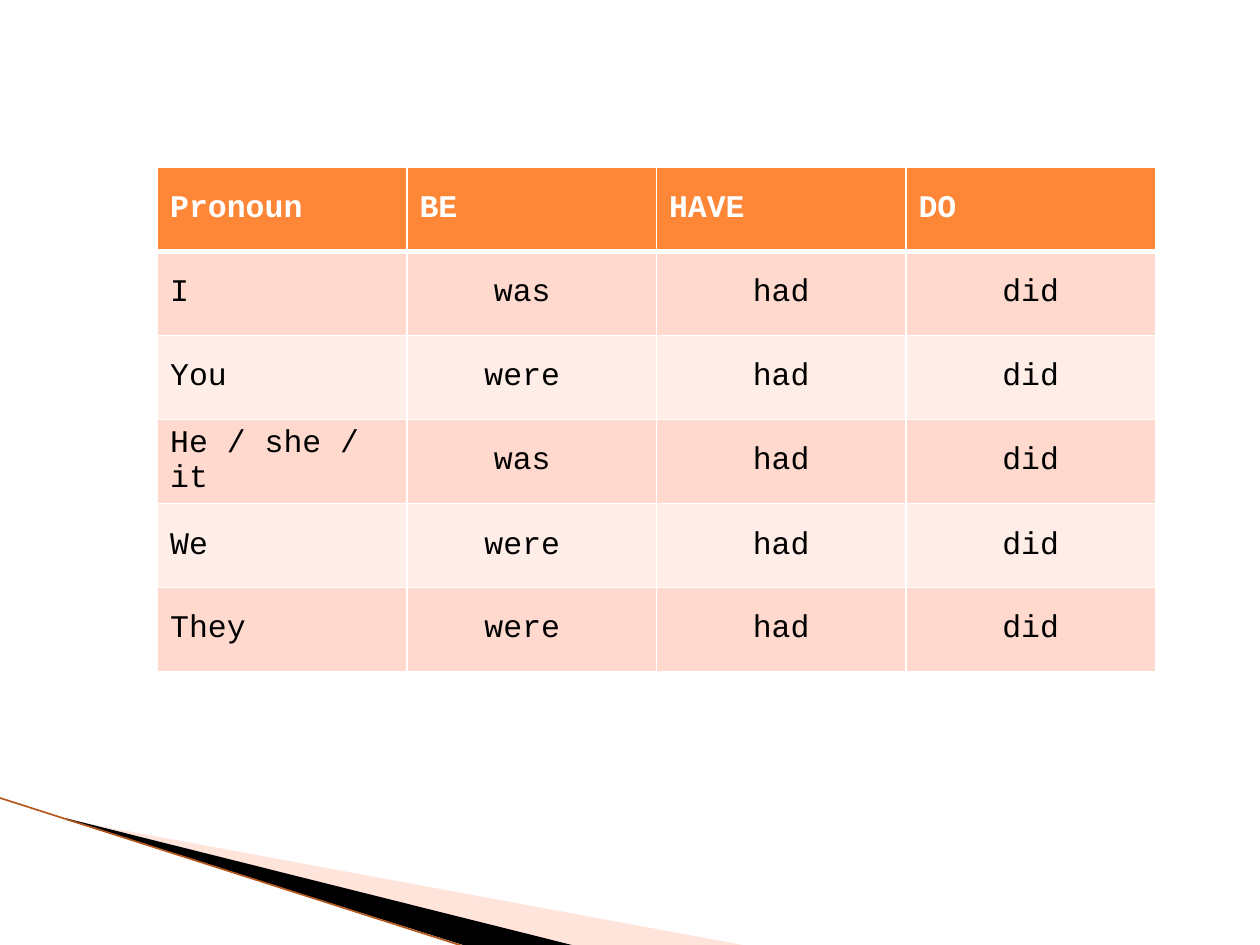
from lxml import etree
from pptx import Presentation
from pptx.dml.color import RGBColor
from pptx.enum.shapes import MSO_CONNECTOR
from pptx.enum.text import MSO_ANCHOR, PP_ALIGN
from pptx.oxml.ns import qn
from pptx.util import Inches, Pt

STRAIGHT = MSO_CONNECTOR.STRAIGHT
MIDDLE = MSO_ANCHOR.MIDDLE
LEFT, CENTER = PP_ALIGN.LEFT, PP_ALIGN.CENTER

SLIDE_W, SLIDE_H = 10, 7.5
FONT = "Courier New"
WHITE, BLACK = "FFFFFF", "000000"
HEADER_FILL = "FE8637"
BAND_FILLS = ("FFD9CE", "FFEDE8")
HEADINGS = ("Pronoun", "BE", "HAVE", "DO")
BE_FORMS = (
    ("I", "was "),
    ("You", "were "),
    ("He / she / it", "was "),
    ("We", "were "),
    ("They", "were "),
)


def color(value):
    return RGBColor.from_string(value)


def add_solid(parent, value, alpha=None):
    solid = etree.SubElement(parent, qn("a:solidFill"))
    tone = etree.SubElement(solid, qn("a:srgbClr"), val=value)
    if alpha is not None:
        etree.SubElement(tone, qn("a:alpha"), val=str(alpha * 1000))


def set_borders(cell, top, bottom):
    properties = cell._tc.get_or_add_tcPr()
    for side, width in (("L", 1), ("R", 1), ("T", top), ("B", bottom)):
        border = etree.SubElement(properties, qn(f"a:ln{side}"), w=str(Pt(width)))
        add_solid(border, WHITE)


def write_cell(cell, text, fill, ink, bold, align):
    cell.fill.solid()
    cell.fill.fore_color.rgb = color(fill)
    cell.vertical_anchor = MIDDLE
    paragraph = cell.text_frame.paragraphs[0]
    paragraph.alignment = align
    run = paragraph.add_run()
    run.text = text
    run.font.name = FONT
    run.font.size = Pt(18)
    run.font.bold = bold
    run.font.color.rgb = color(ink)


def add_verb_table(slide, left, top, width, height):
    rows = [HEADINGS] + [(pronoun, be, "had", "did") for pronoun, be in BE_FORMS]
    frame = slide.shapes.add_table(
        len(rows), len(HEADINGS),
        Inches(left), Inches(top), Inches(width), Inches(height),
    )
    table = frame.table
    for r, row in enumerate(rows):
        header = r == 0
        fill = HEADER_FILL if header else BAND_FILLS[(r - 1) % 2]
        ink = WHITE if header else BLACK
        for c, text in enumerate(row):
            cell = table.cell(r, c)
            set_borders(cell, 3 if r == 1 else 1, 3 if header else 1)
            align = LEFT if header or c == 0 else CENTER
            write_cell(cell, text, fill, ink, header, align)


def add_wedge(slide, points, fill, alpha=None):
    start, *others = [(Inches(x), Inches(y)) for x, y in points]
    builder = slide.shapes.build_freeform(*start)
    builder.add_line_segments(others, close=True)
    wedge = builder.convert_to_shape()
    wedge.shadow.inherit = False
    wedge.fill.solid()
    wedge.fill.fore_color.rgb = color(fill)
    wedge.line.fill.background()
    if alpha is not None:
        tone = wedge._element.spPr.find(qn("a:solidFill"))[0]
        etree.SubElement(tone, qn("a:alpha"), val=str(alpha * 1000))


def add_corner_rays(slide, left, top, width, height):
    def place(*shares):
        return [(left + x * width, top + y * height) for x, y in shares]

    pale = place((0.09, 0.15), (1, 1), (0.77, 1), (0.09, 0.14))
    dark = place((0.09, 0.14), (0.77, 1), (0.63, 1.01), (0.09, 0.15))
    add_wedge(slide, pale, "FFBCA5", 40)
    add_wedge(slide, dark, BLACK)
    start, end = place((0, 0), (0.625, 1.01))
    edge = slide.shapes.add_connector(
        STRAIGHT, *(Inches(value) for value in (*start, *end))
    )
    edge.line.color.rgb = color("B4581C")
    edge.line.width = Pt(0.95)
    etree.SubElement(edge._element.spPr, qn("a:effectLst"))


def main():
    deck = Presentation()
    deck.slide_width, deck.slide_height = Inches(SLIDE_W), Inches(SLIDE_H)
    slide = deck.slides.add_slide(deck.slide_layouts[6])
    slide.background.fill.solid()
    slide.background.fill.fore_color.rgb = color(WHITE)
    add_corner_rays(slide, -0.01, 6.33, 5.96, 1.18)
    add_verb_table(slide, 1.25, 1.33, 7.92, 4)
    deck.save("out.pptx")


if __name__ == "__main__":
    main()
